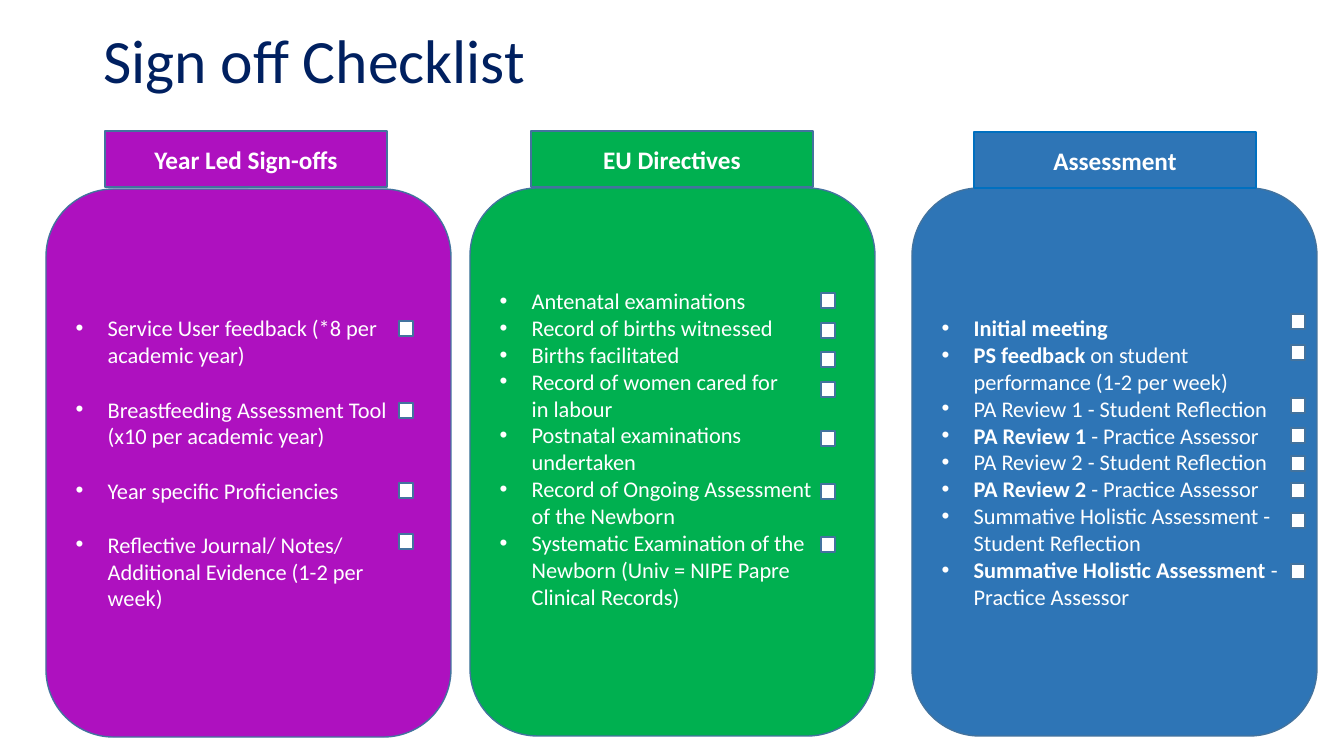
from lxml import etree
from pptx import Presentation
from pptx.dml.color import RGBColor
from pptx.enum.shapes import MSO_SHAPE
from pptx.enum.text import MSO_ANCHOR, PP_ALIGN
from pptx.oxml.ns import qn
from pptx.util import Emu, Pt

RECT, ROUND = MSO_SHAPE.RECTANGLE, MSO_SHAPE.ROUNDED_RECTANGLE
LEFT, CENTER, MIDDLE = PP_ALIGN.LEFT, PP_ALIGN.CENTER, MSO_ANCHOR.MIDDLE

COLORS = {"title": "002060", "purple": "AE11BF", "green": "00B050",
          "blue": "2E75B6", "edge": "43739E", "tab_edge": "0070C0",
          "white": "FFFFFF"}
TITLE = "Sign off Checklist"

COLUMNS = [
    {"heading": "Year Led Sign-offs", "fill": "purple", "tab_edge": "edge",
     "panel": (46, 189), "tab": (105, 131), "gap": 19.5, "bottom": 5,
     "box_x": 399, "box_tops": [321, 403, 483, 534],
     "items": [
         ("", "Service User feedback (*8 per academic year)"),
         ("", "Breastfeeding Assessment Tool (x10 per academic year)"),
         ("", "Year specific Proficiencies"),
         ("", "Reflective Journal/ Notes/ Additional Evidence (1-2 per week)")]},
    {"heading": "EU Directives", "fill": "green", "tab_edge": "edge",
     "panel": (470, 188), "tab": (531, 131), "gap": 0, "bottom": 32,
     "box_x": 821, "box_tops": [293, 323, 352, 382, 431, 484, 537],
     "items": [
         ("", "Antenatal examinations"),
         ("", "Record of births witnessed"),
         ("", "Births facilitated"),
         ("", "Record of women cared for\nin labour"),
         ("", "Postnatal examinations undertaken"),
         ("", "Record of Ongoing Assessment\nof the Newborn"),
         ("", "Systematic Examination of the Newborn "
              "(Univ = NIPE Papre Clinical Records)")]},
    {"heading": "Assessment", "fill": "blue", "tab_edge": "tab_edge",
     "panel": (912, 188), "tab": (974, 132), "gap": 0, "bottom": 5,
     "box_x": 1291, "box_tops": [314, 345, 398, 428, 456, 483, 513, 564],
     "items": [
         ("Initial meeting", ""),
         ("PS feedback ", "on student performance (1-2 per week)"),
         ("", "PA Review 1 - Student Reflection"),
         ("PA Review 1", " - Practice Assessor"),
         ("", "PA Review 2 - Student Reflection"),
         ("PA Review 2 ", "- Practice Assessor"),
         ("", "Summative Holistic Assessment - Student Reflection"),
         ("Summative Holistic Assessment", " - Practice Assessor")]},
]
PANEL_SIZE, TAB_SIZE, BOX_SIZE = (405, 548), (282, 56), (14, 15)
INDENT = 32


def px(n):
    return Emu(round(n * 914400 / 100.8))


def rgb(name):
    return RGBColor.from_string(COLORS[name])


def add_box(slide, kind, pos, size, fill, edge):
    sp = slide.shapes.add_shape(kind, *map(px, pos + size))
    sp.shadow.inherit = False
    sp.fill.solid()
    sp.fill.fore_color.rgb = rgb(fill)
    sp.line.color.rgb = rgb(edge)
    sp.line.width = Pt(1)
    sp.text_frame.vertical_anchor = MIDDLE
    return sp


def add_run(p, text, size, color="white", bold=False):
    for i, line in enumerate(text.split("\n")):
        if i:
            p.add_line_break()
        r = p.add_run()
        r.text = line
        r.font.name = "Calibri"
        r.font.size = Pt(size)
        r.font.bold = bold
        r.font.color.rgb = rgb(color)


def set_bullet(p):
    pPr = p._p.get_or_add_pPr()
    pPr.set("marL", str(px(INDENT)))
    pPr.set("indent", str(-px(INDENT)))
    etree.SubElement(pPr, qn("a:buFont")).set("typeface", "Arial")
    etree.SubElement(pPr, qn("a:buChar")).set("char", "•")


def add_items(tf, items, gap):
    for i, (bold, regular) in enumerate(items):
        p = tf.add_paragraph() if i else tf.paragraphs[0]
        p.alignment = LEFT
        p.space_before = Pt(gap if i else 0)
        set_bullet(p)
        if bold:
            add_run(p, bold, 16, bold=True)
        if regular:
            add_run(p, regular, 16)


def main():
    prs = Presentation()
    prs.slide_width, prs.slide_height = px(1344), px(756)
    slide = prs.slides.add_slide(prs.slide_layouts[5])

    title = slide.shapes.title
    title.left, title.top, title.width, title.height = map(px, (93, 13, 1159, 101))
    title.text_frame.vertical_anchor = MIDDLE
    p = title.text_frame.paragraphs[0]
    p.alignment = LEFT
    p.line_spacing = 0.9
    add_run(p, TITLE, 44, "title")

    for col in COLUMNS:
        panel = add_box(slide, ROUND, col["panel"], PANEL_SIZE, col["fill"], "edge")
        panel.text_frame.margin_bottom = px(col["bottom"])
        add_items(panel.text_frame, col["items"], col["gap"])

        tab = add_box(slide, RECT, col["tab"], TAB_SIZE, col["fill"], col["tab_edge"])
        p = tab.text_frame.paragraphs[0]
        p.alignment = CENTER
        add_run(p, col["heading"], 18, bold=True)

        for top in col["box_tops"]:
            add_box(slide, RECT, (col["box_x"], top), BOX_SIZE, "white", "edge")

    prs.save("out.pptx")


if __name__ == "__main__":
    main()
